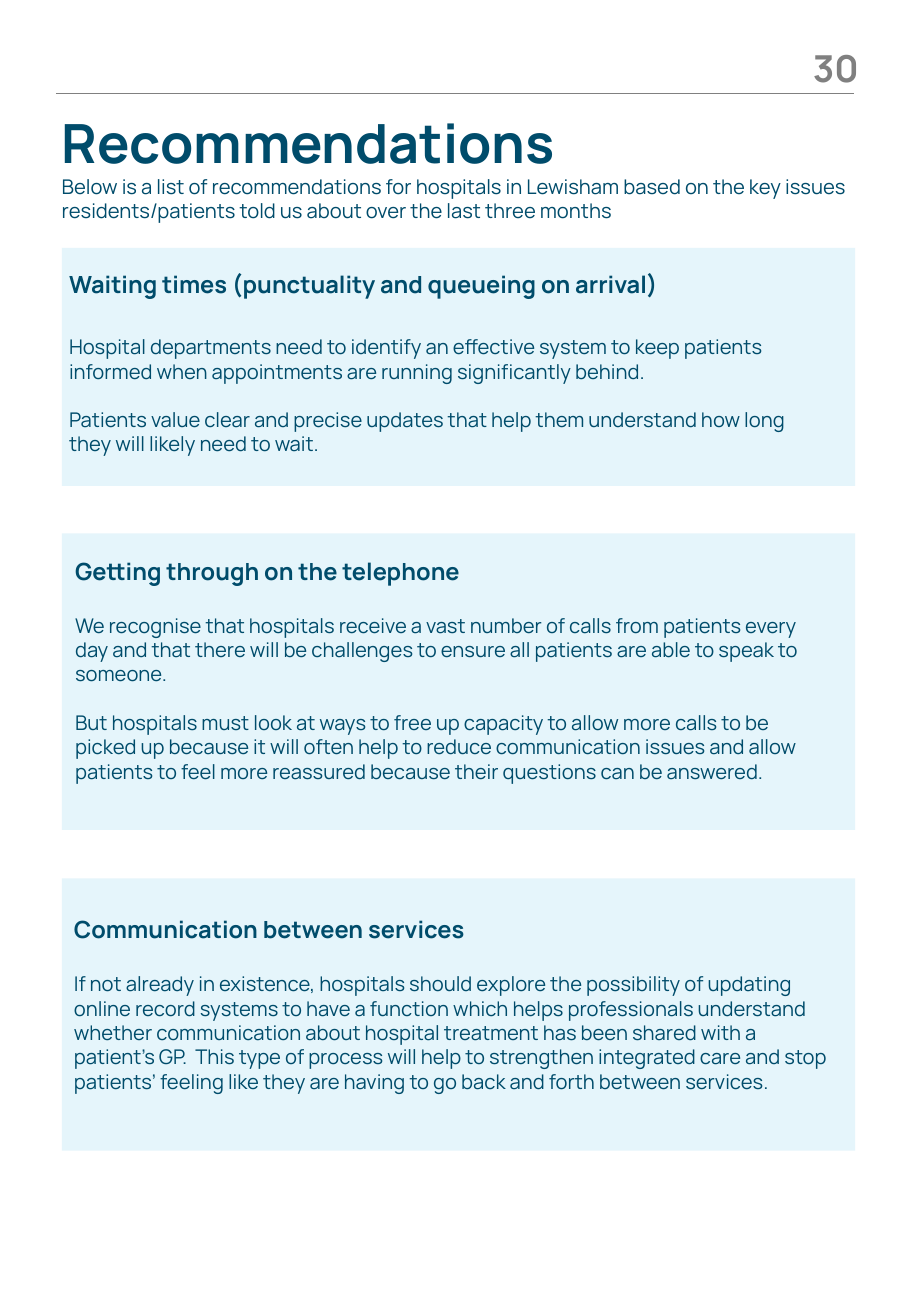
from pptx import Presentation
from pptx.dml.color import RGBColor as Rgb
from pptx.enum.shapes import MSO_CONNECTOR as Conn, MSO_SHAPE as Shape
from pptx.enum.text import PP_ALIGN as Align
from pptx.oxml.ns import qn
from lxml.etree import SubElement as Sub

PX = 9144
FONT = "Manrope"
HEX = {"ink": "004C6B", "grey": "808080", "pale": "E5F5FB"}
PAGE = (750, 1083)
RULE = (46, 77, 703, 77)
NUM = ("30", (643, 37, 64, 39))
INTRO = (
    (41, 85, 671, 104),
    [
        ("Recommendations", 32, True, 0),
        ("Below is a list of recommendations for hospitals in Lewisham based on the key issues "
         "residents/patients told us about over the last three months", 12, False, 0),
    ],
)
LEFT, WIDE, TEXT_WIDE = 51, 653, 644
PANELS = [
    {
        "top": 204, "high": 196, "text": (47, 217, 165), "gap": 21.6,
        "head": "Waiting times (punctuality and queueing on arrival)",
        "body": [
            "Hospital departments need to identify an effective system to keep patients "
            "informed when appointments are running significantly behind.",
            "Patients value clear and precise updates that help them understand how long "
            "they will likely need to wait.",
        ],
    },
    {
        "top": 439, "high": 244, "text": (52, 453, 263), "gap": 16.8,
        "head": "Getting through on the telephone",
        "body": [
            "We recognise that hospitals receive a vast number of calls from patients every "
            "day and that there will be challenges to ensure all patients are able to speak "
            "to someone.",
            "But hospitals must look at ways to free up capacity to allow more calls to be "
            "picked up because it will often help to reduce communication issues and allow "
            "patients to feel more reassured because their questions can be answered.",
        ],
    },
    {
        "top": 723, "high": 224, "text": (51, 748, 199), "gap": 16.8,
        "head": "Communication between services",
        "body": [
            "If not already in existence, hospitals should explore the possibility of updating "
            "online record systems to have a function which helps professionals understand "
            "whether communication about hospital treatment has been shared with a "
            "patient’s GP.  This type of process will help to strengthen integrated care and "
            "stop patients’ feeling like they are having to go back and forth between services.",
        ],
    },
]
BODY_GAP = 14.4


def emu(box):
    return [n * PX for n in box]


def pt(n):
    return int(n * 12700)


def write(slide, box, paras, tone="ink", align=Align.LEFT, inset=True):
    frame = slide.shapes.add_textbox(*emu(box)).text_frame
    frame.word_wrap = True
    if not inset:
        frame.margin_left = frame.margin_right = 0
        frame.margin_top = frame.margin_bottom = 0
    for i, (text, size, bold, gap) in enumerate(paras):
        para = frame.add_paragraph() if i else frame.paragraphs[0]
        para.alignment = align
        para.space_before = pt(gap)
        run = para.add_run()
        run.text = text
        run.font.name = FONT
        run.font.size = pt(size)
        run.font.bold = bold
        run.font.color.rgb = Rgb.from_string(HEX[tone])


def rule(slide):
    line = slide.shapes.add_connector(Conn.STRAIGHT, *emu(RULE))
    line.line.color.rgb = Rgb.from_string(HEX["grey"])
    line.line.width = pt(0.75)
    Sub(line._element.spPr, qn("a:effectLst"))


def panel(slide, item):
    box = (LEFT, item["top"], WIDE, item["high"])
    card = slide.shapes.add_shape(Shape.RECTANGLE, *emu(box))
    card.shadow.inherit = False
    card.fill.solid()
    card.fill.fore_color.rgb = Rgb.from_string(HEX["pale"])
    card.line.fill.background()
    left, top, high = item["text"]
    paras = [(item["head"], 14, True, 0)]
    for i, text in enumerate(item["body"]):
        paras.append((text, 12, False, BODY_GAP if i else item["gap"]))
    write(slide, (left, top, TEXT_WIDE, high), paras)


def main():
    deck = Presentation()
    deck.slide_width, deck.slide_height = emu(PAGE)
    slide = deck.slides.add_slide(deck.slide_layouts[6])
    rule(slide)
    text, box = NUM
    write(slide, box, [(text, 22, True, 0)], "grey", Align.RIGHT, False)
    for item in PANELS:
        panel(slide, item)
    write(slide, *INTRO)
    deck.save("out.pptx")


if __name__ == "__main__":
    main()
